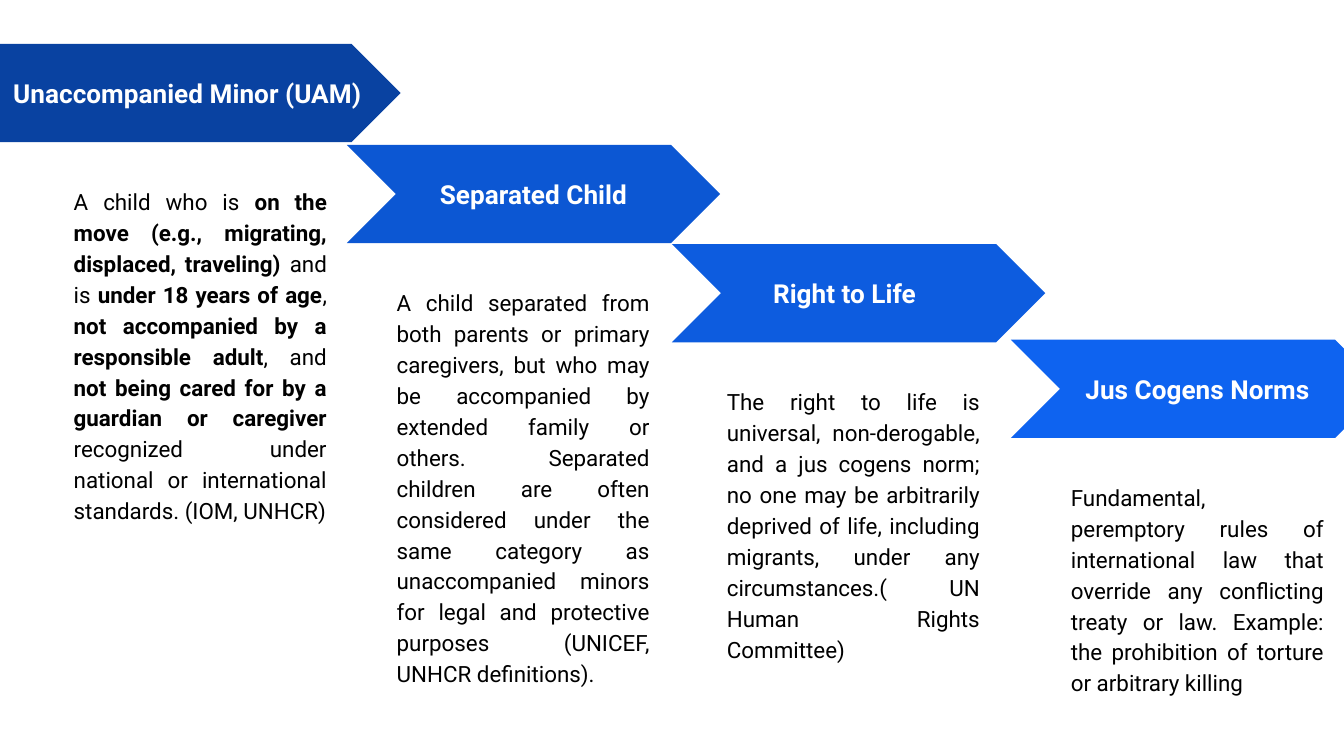
"""Build a slide of four stepped arrows, each with a definition below it."""
import dataclasses

import pptx
import pptx.dml.color
import pptx.enum.shapes
import pptx.enum.text
import pptx.util

Pt = pptx.util.Pt
RGB = pptx.dml.color.RGBColor.from_string
SHAPE = pptx.enum.shapes.MSO_SHAPE
ALIGN = pptx.enum.text.PP_ALIGN
ANCHOR = pptx.enum.text.MSO_ANCHOR


@dataclasses.dataclass(frozen=True)
class Theme:
    font: str = "Roboto"
    heading_size: float = 14
    body_size: float = 12
    heading_color: str = "FFFFFF"
    body_color: str = "000000"
    steps: tuple = ("0942A1", "0C57D3", "0D5CDF", "0E63F0")
    inset: float = 7.2
    line_spacing: float = 1.15


class Deck:
    def __init__(self, prs, theme):
        self.theme = theme
        self.s = prs.slides.add_slide(prs.slide_layouts[6])

    def frame(self, sp, anchor, left_inset):
        tf = sp.text_frame
        tf.word_wrap = True
        tf.vertical_anchor = anchor
        tf.margin_left = Pt(left_inset)
        tf.margin_top = tf.margin_right = tf.margin_bottom = Pt(self.theme.inset)
        return tf

    def style(self, p, size, color, align):
        p.alignment = align
        p.font.name = self.theme.font
        p.font.size = Pt(size)
        p.font.color.rgb = RGB(color)

    def arrow(self, kind, box, fill, text, align, indent=0):
        sp = self.s.shapes.add_shape(kind, *map(Pt, box))
        sp.adjustments[0] = 0.5
        sp.shadow.inherit = False
        sp.fill.solid()
        sp.fill.fore_color.rgb = RGB(fill)
        sp.line.fill.background()
        tf = self.frame(sp, ANCHOR.MIDDLE, self.theme.inset + indent)
        p = tf.paragraphs[0]
        p.text = text
        self.style(p, self.theme.heading_size, self.theme.heading_color, align)
        p.font.bold = True

    def body(self, box, text):
        sp = self.s.shapes.add_textbox(*map(Pt, box))
        p = self.frame(sp, ANCHOR.TOP, self.theme.inset).paragraphs[0]
        self.style(p, self.theme.body_size, self.theme.body_color, ALIGN.JUSTIFY)
        p.line_spacing = self.theme.line_spacing
        for i, part in enumerate(text.split("**")):
            r = p.add_run()
            r.text = part
            if i % 2:
                r.font.bold = True


ARROW_HEIGHT = 52.6
BODY_OFFSET = 68
BODY_SIZE = (149.8, 206)

STEPS = [
    (SHAPE.PENTAGON, 0, 23.5, 214.6, 32.4, ALIGN.LEFT, 0,
     "Unaccompanied Minor (UAM)",
     "A child who is **on the move (e.g., migrating, displaced, traveling)** and is "
     "**under 18 years of age**, **not accompanied by a responsible adult**, and "
     "**not being cared for by a guardian or caregiver** recognized under national "
     "or international standards. (IOM, UNHCR)"),
    (SHAPE.CHEVRON, 185.8, 77.7, 200, 205.4, ALIGN.CENTER, 0,
     "Separated Child",
     "A child separated from both parents or primary caregivers, but who may be "
     "accompanied by extended family or others. Separated children are often "
     "considered under the same category as unaccompanied minors for legal and "
     "protective purposes (UNICEF, UNHCR definitions)."),
    (SHAPE.CHEVRON, 360, 130.8, 200, 382.3, ALIGN.LEFT, 20.7,
     "Right to Life",
     "The right to life is universal, non-derogable, and a jus cogens norm; no one "
     "may be arbitrarily deprived of life, including migrants, under any "
     "circumstances.( UN Human Rights Committee)"),
    (SHAPE.CHEVRON, 541.6, 182, 200, 566.6, ALIGN.CENTER, 0,
     "Jus Cogens Norms",
     "Fundamental, peremptory rules of international law that override any "
     "conflicting treaty or law. Example: the prohibition of torture or arbitrary "
     "killing"),
]


def main():
    prs = pptx.Presentation()
    prs.slide_width, prs.slide_height = Pt(720), Pt(405)
    theme = Theme()
    deck = Deck(prs, theme)
    for fill, step in zip(theme.steps, STEPS):
        kind, left, top, width, body_left, align, indent, heading, text = step
        deck.arrow(kind, (left, top, width, ARROW_HEIGHT), fill, heading, align, indent)
        deck.body((body_left, top + BODY_OFFSET, *BODY_SIZE), text)
    prs.save("out.pptx")


if __name__ == "__main__":
    main()
